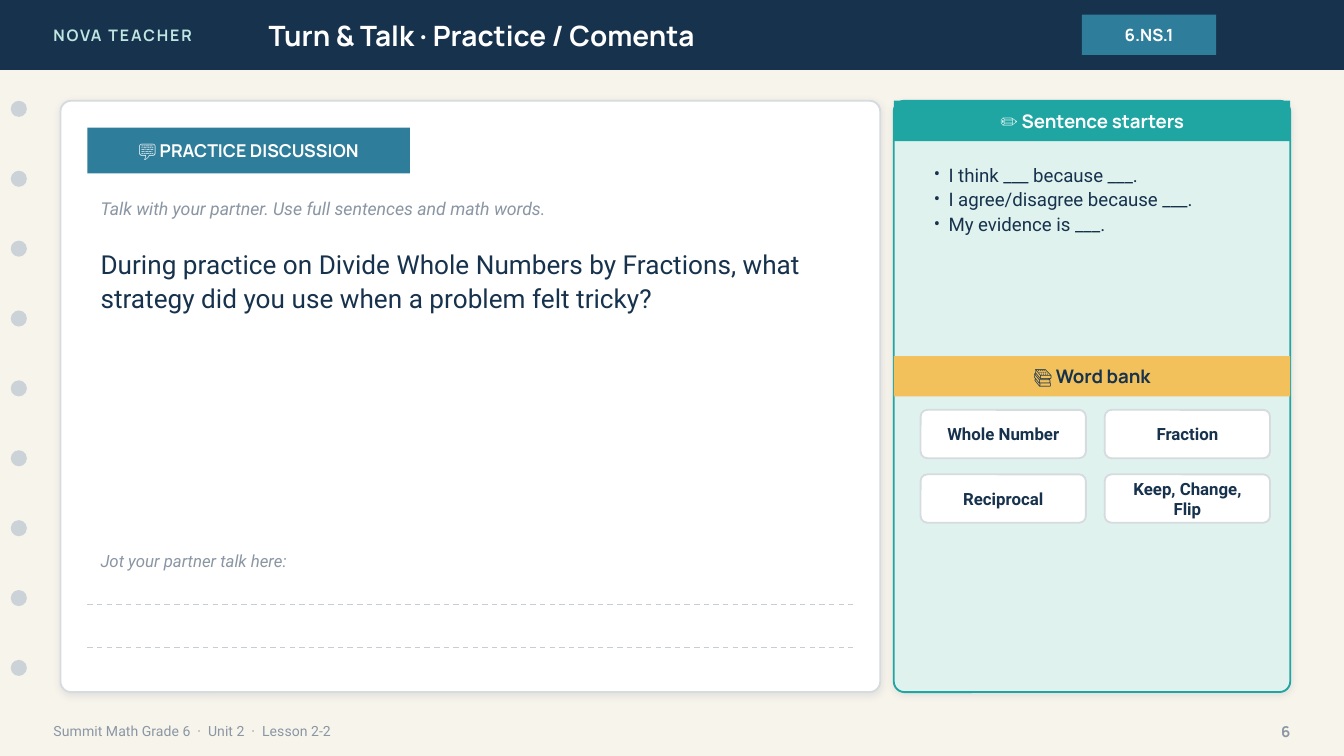
import lxml.etree
import pptx
import pptx.dml.color
import pptx.enum.dml
import pptx.enum.shapes
import pptx.enum.text
import pptx.oxml.ns
import pptx.util

Inches = pptx.util.Inches
RGB = pptx.dml.color.RGBColor
Shape = pptx.enum.shapes.MSO_SHAPE
Align = pptx.enum.text.PP_ALIGN
Anchor = pptx.enum.text.MSO_ANCHOR
qn = pptx.oxml.ns.qn

NAVY = RGB(0x17, 0x32, 0x4D)
BLUE = RGB(0x2E, 0x7D, 0x9A)
TEAL = RGB(0x1F, 0xA6, 0xA2)
MINT = RGB(0xDF, 0xF2, 0xEE)
AQUA = RGB(0xBF, 0xE6, 0xE2)
GOLD = RGB(0xF2, 0xC1, 0x5B)
CREAM = RGB(0xF7, 0xF4, 0xEC)
WHITE = RGB(0xFF, 0xFF, 0xFF)
GRAY = RGB(0x8A, 0x96, 0xA3)
EDGE = RGB(0xD6, 0xDB, 0xDF)
DOT = RGB(0xCB, 0xD3, 0xD9)
RULE = RGB(0xC7, 0xCD, 0xD2)
SHADE = RGB(0x1C, 0x2E, 0x42)
HEAD, BODY = "Manrope", "Roboto"


def add_xml(parent, tag, **attrs):
    return lxml.etree.SubElement(parent, qn(tag), attrs)


def write(frame, text, size=9, font=BODY, color=NAVY, bold=False, italic=False,
          align=Align.LEFT, anchor=Anchor.MIDDLE, space=None, track=0, bullet=False):
    frame.word_wrap = True
    frame.vertical_anchor = anchor
    for i, line in enumerate(text.split("\n")):
        para = frame.add_paragraph() if i else frame.paragraphs[0]
        para.alignment = align
        if space:
            para.line_spacing = space
        if bullet:
            props = para._p.get_or_add_pPr()
            props.set("marL", str(Inches(0.11)))
            props.set("indent", str(-Inches(0.11)))
            add_xml(props, "a:buFont", typeface=font)
            add_xml(props, "a:buChar", char="•")
        run = para.add_run()
        run.text = line
        face = run.font
        face.name, face.size = font, pptx.util.Pt(size)
        face.bold, face.italic = bold, italic
        face.color.rgb = color
        if track:
            run._r.get_or_add_rPr().set("spc", str(track * 100))


class Board:
    def __init__(self, slide):
        self.slide = slide
        slide.background.fill.solid()
        slide.background.fill.fore_color.rgb = CREAM

    def text(self, x, y, w, h, words, **style):
        box = self.slide.shapes.add_textbox(Inches(x), Inches(y), Inches(w), Inches(h))
        write(box.text_frame, words, **style)

    def shape(self, kind, x, y, w, h, fill, edge=None, round=None):
        item = self.slide.shapes.add_shape(kind, Inches(x), Inches(y), Inches(w), Inches(h))
        item.shadow.inherit = False
        item.fill.solid()
        item.fill.fore_color.rgb = fill
        if edge:
            item.line.color.rgb = edge
            item.line.width = pptx.util.Pt(1)
        else:
            item.line.fill.background()
        if round:
            item.adjustments[0] = round
        return item

    def band(self, x, y, w, h, fill, words, color=WHITE, size=10):
        item = self.shape(Shape.RECTANGLE, x, y, w, h, fill)
        write(item.text_frame, words, size=size, font=HEAD, color=color, bold=True,
              align=Align.CENTER)

    def card(self, x, y, w, h, fill, edge, round):
        item = self.shape(Shape.ROUNDED_RECTANGLE, x, y, w, h, fill, edge, round)
        glow = add_xml(item._element.spPr.find(qn("a:effectLst")), "a:outerShdw",
                       blurRad=str(pptx.util.Pt(4)), dist=str(pptx.util.Pt(1)),
                       dir="5400000", algn="bl", rotWithShape="0")
        tint = add_xml(glow, "a:srgbClr", val=str(SHADE))
        add_xml(tint, "a:alpha", val="10000")

    def chip(self, x, y, word):
        item = self.shape(Shape.ROUNDED_RECTANGLE, x, y, 1.23, 0.36, WHITE, EDGE, 0.14)
        write(item.text_frame, word, bold=True, align=Align.CENTER)

    def rule(self, x, y, end):
        line = self.slide.shapes.add_connector(
            pptx.enum.shapes.MSO_CONNECTOR.STRAIGHT,
            Inches(x), Inches(y), Inches(end), Inches(y))
        line.line.color.rgb = RULE
        line.line.width = pptx.util.Pt(0.75)
        line.line.dash_style = pptx.enum.dml.MSO_LINE.DASH
        add_xml(line._element.spPr, "a:effectLst")


def main():
    deck = pptx.Presentation()
    deck.slide_width = Inches(10)
    deck.slide_height = Inches(10) * 9 // 16
    board = Board(deck.slides.add_slide(deck.slide_layouts[6]))

    board.shape(Shape.RECTANGLE, 0, 0, 10, 0.52, NAVY)
    board.text(0.3, 0, 2.4, 0.52, "NOVA TEACHER", size=8.5, font=HEAD, color=AQUA,
               bold=True, track=1)
    board.text(1.9, 0, 5.6, 0.52, "Turn & Talk · Practice / Comenta", size=15, font=HEAD,
               color=WHITE, bold=True)
    board.band(8.05, 0.11, 1, 0.3, BLUE, "6.NS.1", size=9)
    for i in range(9):
        board.shape(Shape.OVAL, 0.08, 0.75 + 0.52 * i, 0.12, 0.12, DOT)
    board.text(0.3, 5.3, 7, 0.28, "Summit Math Grade 6  ·  Unit 2  ·  Lesson 2-2",
               size=7.5, color=GRAY)
    board.text(9.2, 5.3, 0.5, 0.28, "6", size=8, font=HEAD, color=GRAY, bold=True,
               align=Align.RIGHT)

    board.card(0.45, 0.75, 6.1, 4.4, WHITE, EDGE, 0.018)
    board.band(0.65, 0.95, 2.4, 0.34, BLUE, "💬 PRACTICE DISCUSSION", size=9.5)
    board.text(0.65, 1.4, 5.7, 0.3,
               "Talk with your partner. Use full sentences and math words.",
               size=9.5, color=GRAY, italic=True)
    board.text(0.65, 1.78, 5.7, 2,
               "During practice on Divide Whole Numbers by Fractions, what strategy "
               "did you use when a problem felt tricky?",
               size=14, anchor=Anchor.TOP, space=1.08)
    board.text(0.65, 4.05, 5.7, 0.25, "Jot your partner talk here:", color=GRAY, italic=True)
    for y in (4.5, 4.82):
        board.rule(0.65, y, 6.35)

    board.card(6.65, 0.75, 2.95, 4.4, MINT, TEAL, 0.027)
    board.band(6.65, 0.75, 2.95, 0.3, TEAL, "✏️ Sentence starters")
    board.text(6.85, 1.15, 2.6, 1.4,
               "I think ___ because ___.\nI agree/disagree because ___.\nMy evidence is ___.",
               size=10, anchor=Anchor.TOP, space=1.1, bullet=True)
    board.band(6.65, 2.65, 2.95, 0.3, GOLD, "📚 Word bank", color=NAVY)
    words = ["Whole Number", "Fraction", "Reciprocal", "Keep, Change, Flip"]
    for i, word in enumerate(words):
        row, col = divmod(i, 2)
        board.chip(6.85 + 1.37 * col, 3.05 + 0.48 * row, word)

    deck.save("out.pptx")


if __name__ == "__main__":
    main()
